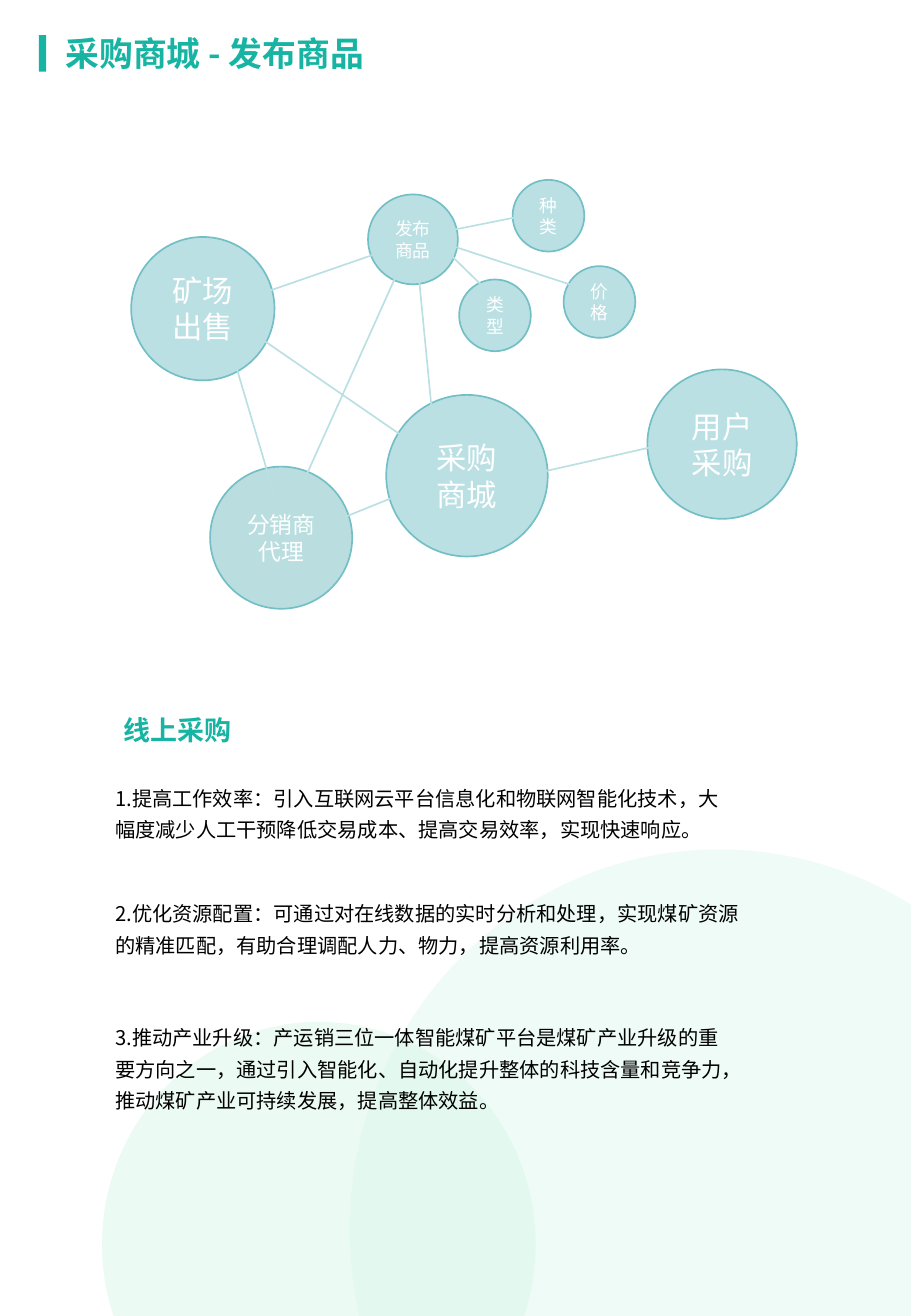
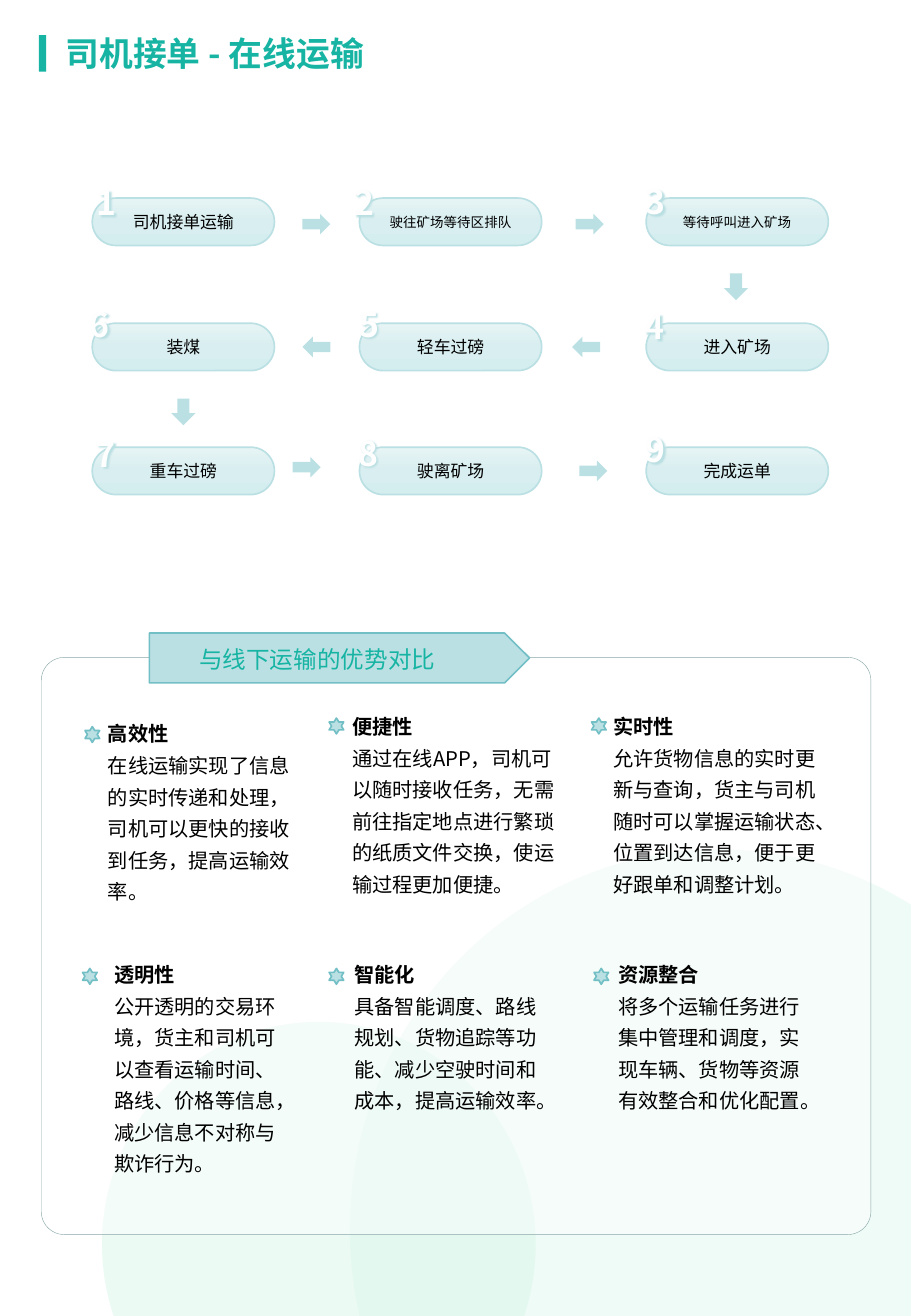
"""Builds two portrait slides on an online purchasing mall and on-line transport."""
from copy import deepcopy

from pptx import Presentation
from pptx import util as u
from pptx.dml.color import RGBColor
from pptx.enum import shapes, text
from pptx.oxml import parse_xml
from pptx.oxml.ns import nsdecls, qn

PX = u.Inches(1) // 100
FONT = "Noto Sans CJK SC"
TEAL = RGBColor(0x17, 0xB4, 0xA3)
AQUA = RGBColor(0xBB, 0xE0, 0xE3)
DULL_AQUA = RGBColor(0xBA, 0xDE, 0xE0)
RIM = RGBColor(0x72, 0xBF, 0xC5)
MINT = RGBColor(0xD3, 0xF4, 0xE7)
GREY = RGBColor(0x8A, 0xA6, 0xA8)
WHITE = RGBColor(0xFF, 0xFF, 0xFF)
DIGIT = RGBColor(0xFE, 0xFE, 0xFE)
BLACK = RGBColor(0, 0, 0)
PILL_STOPS = [
    (0, RGBColor(0xE6, 0xF4, 0xF5)),
    (0.5, RGBColor(0xD9, 0xEE, 0xF0)),
    (1, RGBColor(0xD4, 0xED, 0xEF)),
]
SHAPE = shapes.MSO_SHAPE
LEFT, CENTER = text.PP_ALIGN.LEFT, text.PP_ALIGN.CENTER
TOP, MIDDLE = text.MSO_ANCHOR.TOP, text.MSO_ANCHOR.MIDDLE


def draw(page, kind, place, fill, line=None, weight=1, alpha=100):
    shape = page.shapes.add_shape(kind, *[PX * value for value in place])
    shape.shadow.inherit = False
    shape.fill.solid()
    shape.fill.fore_color.rgb = fill
    if alpha < 100:
        color = shape._element.spPr.find(".//" + qn("a:srgbClr"))
        color.append(parse_xml(f'<a:alpha {nsdecls("a")} val="{alpha * 1000}"/>'))
    if line is None:
        shape.line.fill.background()
    else:
        shape.line.color.rgb = line
        shape.line.width = u.Pt(weight)
    return shape


def write(box, lines, size, color, bold=False, align=LEFT, anchor=TOP, spacing=1.0):
    frame = box.text_frame
    frame.text = "\n".join(lines)
    frame_format = {"word_wrap": True, "vertical_anchor": anchor,
                    "auto_size": text.MSO_AUTO_SIZE.NONE}
    para_format = {"alignment": align, "line_spacing": spacing}
    font_format = {"name": FONT, "size": u.Pt(size), "bold": bold}
    for name, value in frame_format.items():
        setattr(frame, name, value)
    for para in frame.paragraphs:
        for name, value in para_format.items():
            setattr(para, name, value)
        for span in para.runs:
            for name, value in font_format.items():
                setattr(span.font, name, value)
            span.font.color.rgb = color
            span._r.get_or_add_rPr().append(
                parse_xml(f'<a:ea {nsdecls("a")} typeface="{FONT}"/>'))


deck = Presentation()
deck.slide_width, deck.slide_height = PX * 750, PX * 1083

pages = []
for heading in ("采购商城 - 发布商品", "司机接单 - 在线运输"):
    page = deck.slides.add_slide(deck.slide_layouts[5])
    draw(page, SHAPE.OVAL, (288, 699, 608, 625), MINT, alpha=34)
    draw(page, SHAPE.OVAL, (84, 841, 357, 366), MINT, alpha=42)
    draw(page, SHAPE.RECTANGLE, (32, 29, 6, 30), TEAL)
    title = page.shapes.title
    title_place = {"left": 44, "top": 22, "width": 357, "height": 44}
    for name, value in title_place.items():
        setattr(title, name, PX * value)
    write(title, [heading], 20, TEAL, bold=True)
    pages.append(page)
mall, transport = pages

circles = [
    (318, 325, 133, AQUA, 18, ["采购", "商城"]),
    (303, 160, 74, AQUA, 10.5, ["发布商品"]),
    (422, 148, 59, AQUA, 10.5, ["种类"]),
    (378, 230, 59, AQUA, 10.5, ["类型"]),
    (464, 219, 59, AQUA, 10.5, ["价格"]),
    (533, 304, 123, AQUA, 18, ["用户", "采购"]),
    (108, 195, 118, AQUA, 18, ["矿场", "出售"]),
    (173, 384, 117, DULL_AQUA, 13.5, ["分销商代理"]),
]
for left, top, width, fill, size, lines in circles:
    circle = draw(mall, SHAPE.OVAL, (left, top, width, width), fill, RIM)
    write(circle, lines, size, WHITE, align=CENTER, anchor=MIDDLE)

links = [
    (214, 278, 333, 360), (214, 242, 315, 207), (374, 189, 434, 177),
    (368, 207, 404, 242), (368, 201, 475, 236), (344, 219, 356, 343),
    (439, 390, 545, 366), (226, 408, 191, 290), (327, 408, 285, 425),
    (327, 225, 250, 396),
]
for ends in links:
    link = mall.shapes.add_connector(
        shapes.MSO_CONNECTOR.STRAIGHT, *[PX * value for value in ends])
    link.line.color.rgb = AQUA
    link.line.width = u.Pt(1)
    link._element.spPr.append(parse_xml(f'<a:effectLst {nsdecls("a")}/>'))

box = mall.shapes.add_textbox(PX * 92, PX * 582, PX * 116, PX * 30)
write(box, ["线上采购"], 16, TEAL, bold=True)
benefits = [
    (636, 528, 62, "1.提高工作效率：引入互联网云平台信息化和物联网智能化技术，"
     "大幅度减少人工干预降低交易成本、提高交易效率，实现快速响应。"),
    (731, 537, 62, "2.优化资源配置：可通过对在线数据的实时分析和处理，"
     "实现煤矿资源的精准匹配，有助合理调配人力、物力，提高资源利用率。"),
    (833, 530, 89, "3.推动产业升级：产运销三位一体智能煤矿平台是煤矿产业升级的重要方向之一，"
     "通过引入智能化、自动化提升整体的科技含量和竞争力，"
     "推动煤矿产业可持续发展，提高整体效益。"),
]
for top, width, height, benefit in benefits:
    box = mall.shapes.add_textbox(PX * 85, PX * top, PX * width, PX * height)
    write(box, [benefit], 12, BLACK, spacing=1.3)

panel = draw(transport, SHAPE.ROUNDED_RECTANGLE, (34, 541, 683, 475),
             WHITE, GREY, weight=0.25, alpha=42)
panel.adjustments[0] = 0.04
features = [
    ((79, 583, 174, 215), (70, 598), "高效性",
     "在线运输实现了信息的实时传递和处理，司机可以更快的接收到任务，提高运输效率。"),
    ((280, 577, 198, 215), (271, 591), "便捷性",
     "通过在线APP，司机可以随时接收任务，无需前往指定地点进行繁琐的纸质文件交换，使运输过程更加便捷。"),
    ((495, 577, 195, 215), (487, 591), "实时性",
     "允许货物信息的实时更新与查询，货主与司机随时可以掌握运输状态、位置到达信息，便于更好跟单和调整计划。"),
    ((84, 781, 165, 248), (68, 797), "透明性",
     "公开透明的交易环境，货主和司机可以查看运输时间、路线、价格等信息，减少信息不对称与欺诈行为。"),
    ((282, 781, 177, 181), (271, 797), "智能化",
     "具备智能调度、路线规划、货物追踪等功能、减少空驶时间和成本，提高运输效率。"),
    ((499, 781, 183, 181), (489, 797), "资源整合",
     "将多个运输任务进行集中管理和调度，实现车辆、货物等资源有效整合和优化配置。"),
]
for place, star, name, detail in features:
    box = transport.shapes.add_textbox(*[PX * value for value in place])
    write(box, [name, detail], 12, BLACK, spacing=1.3)
    box.text_frame.paragraphs[0].runs[0].font.bold = True
    draw(transport, SHAPE.STAR_6_POINT, (*star, 12, 13), AQUA, RIM)

draw(transport, SHAPE.PENTAGON, (123, 521, 313, 41), AQUA, RIM)
box = transport.shapes.add_textbox(PX * 154, PX * 526, PX * 242, PX * 35)
write(box, ["与线下运输的优势对比"], 14, TEAL)

steps = [
    ("司机接单运输", 10, 70, 145), ("驶往矿场等待区排队", 8, 282, 145),
    ("等待呼叫进入矿场", 8, 522, 144), ("进入矿场", 10, 521, 247),
    ("轻车过磅", 10, 286, 245), ("装煤", 10, 64, 245),
    ("重车过磅", 10, 69, 352), ("驶离矿场", 10, 285, 351),
    ("完成运单", 10, 522, 348),
]
columns, rows = (76, 296, 532), (163, 266, 368)
for index, (label, size, badge_left, badge_top) in enumerate(steps):
    row, column = divmod(index, 3)
    if row == 1:
        column = 2 - column
    pill = draw(transport, SHAPE.ROUNDED_RECTANGLE,
                (columns[column], rows[row], 150, 39), AQUA, AQUA)
    pill.adjustments[0] = 0.5
    pill.fill.gradient()
    pill.fill.gradient_angle = 270
    stops = pill._element.spPr.find(".//" + qn("a:gsLst"))
    stops.insert(1, deepcopy(stops[0]))
    for stop, (position, color) in zip(pill.fill.gradient_stops, PILL_STOPS):
        stop.position = position
        stop.color.rgb = color
    write(pill, [label], size, BLACK, align=CENTER, anchor=MIDDLE)

    badge = transport.shapes.add_textbox(
        PX * badge_left, PX * badge_top, PX * 26, PX * 44)
    write(badge, [str(index + 1)], 20, DIGIT, bold=True, align=CENTER)
    span = badge.text_frame.paragraphs[0].runs[0]
    span._r.get_or_add_rPr().insert(0, parse_xml(
        f'<a:ln {nsdecls("a")} w="9525"><a:solidFill>'
        f'<a:srgbClr val="{AQUA}"/></a:solidFill></a:ln>'))
    badge._element.spPr.append(parse_xml(
        f'<a:effectLst {nsdecls("a")}><a:outerShdw blurRad="12700" dist="12700" '
        f'dir="2700000"><a:srgbClr val="{AQUA}"/></a:outerShdw></a:effectLst>'))

arrows = [
    (249, 176, 23, 17, 0), (474, 176, 23, 17, 0), (595, 226, 22, 20, 90),
    (471, 277, 23, 17, 180), (249, 277, 23, 17, 180), (140, 329, 22, 20, 90),
    (241, 376, 23, 17, 0), (477, 379, 23, 17, 0),
]
for *place, turn in arrows:
    arrow = draw(transport, SHAPE.RIGHT_ARROW, place, AQUA)
    arrow.rotation = turn

deck.save("out.pptx")
